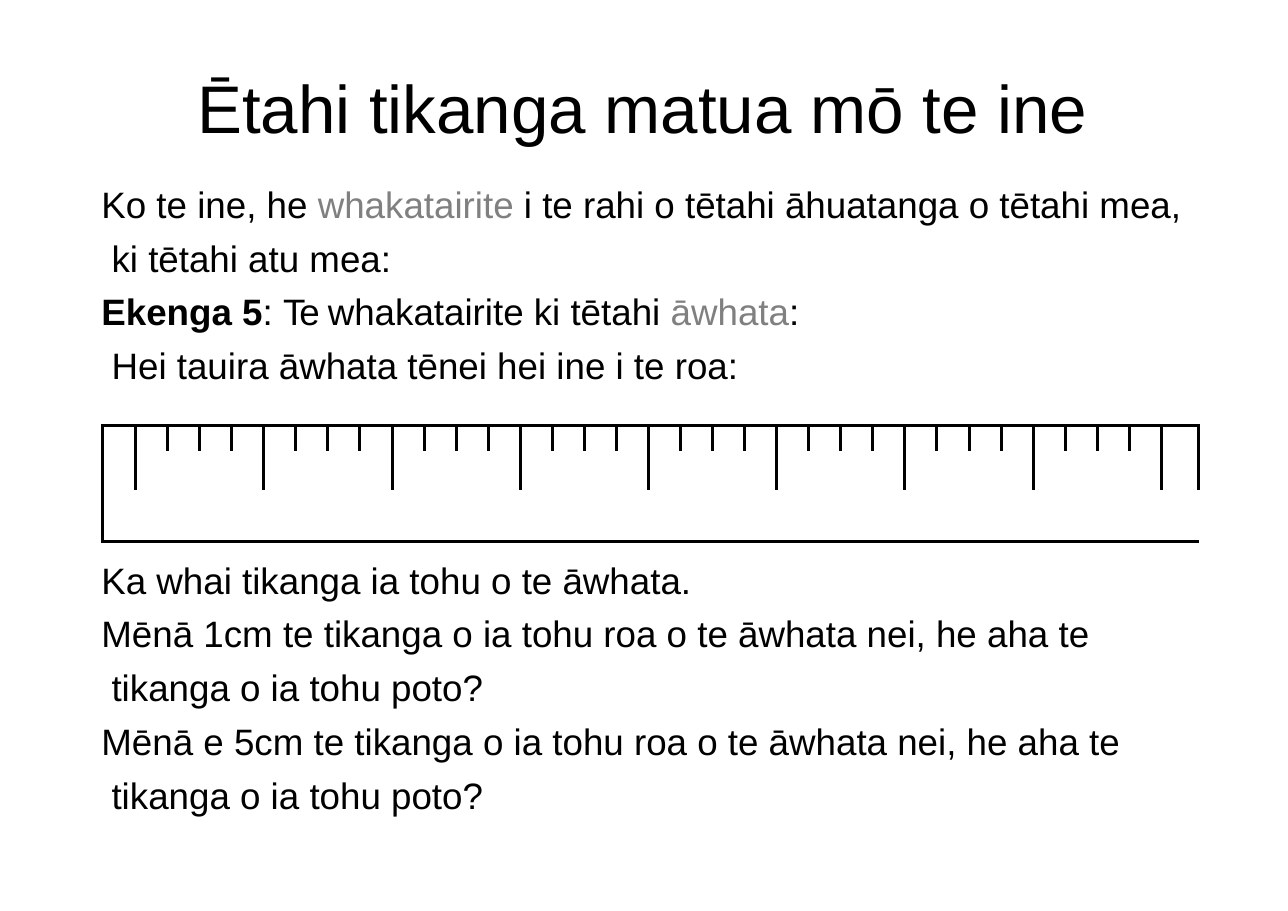
from lxml import etree
from pptx import Presentation, util as u
from pptx.dml.color import RGBColor
from pptx.enum import text
from pptx.oxml import ns

BLACK = RGBColor(0, 0, 0)
GREY = RGBColor(0x80, 0x80, 0x80)
FONT = "Arial"
WIDTH, HEIGHT = u.Inches(11.69), u.Inches(8.27)
NO_GRID_STYLE = "{2D5ABB26-0587-4C30-8999-92F81FD0307C}"

# Ruler: margin columns around 8 units of 4 steps
UNITS, STEPS = 8, 4
LAST = UNITS * STEPS + 1
ROWS = [0.23, 0.35, 0.47]
START, END = 0.3, 0.34

TITLE = "Ētahi tikanga matua mō te ine"
# Each paragraph is a list of (words, format) runs
INTRO = [
    [("Ko te ine, he ", {}), ("whakatairite ", {"color": GREY}),
     ("i te rahi o tētahi āhuatanga o tētahi mea,\n ki tētahi atu mea:", {})],
    [("Ekenga 5", {"bold": True}), (": ", {}), ("Te ", {"tracking": -1.4}),
     ("whakatairite ki tētahi ", {}), ("āwhata", {"color": GREY}),
     (":\n Hei tauira āwhata tēnei hei ine i te roa:", {})],
]
QUESTIONS = [
    [("Ka whai tikanga ia tohu o te āwhata.", {})],
    [("Mēnā 1cm te tikanga o ia tohu roa o te āwhata nei, he aha te\n"
      " tikanga o ia tohu poto?", {})],
    [("Mēnā e 5cm te tikanga o ia tohu roa o te āwhata nei, he aha te\n"
      " tikanga o ia tohu poto?", {})],
]


def area(left, top, width, height):
    """Turn percentages of the slide into a position and size."""
    return (int(WIDTH * left / 100), int(HEIGHT * top / 100),
            int(WIDTH * width / 100), int(HEIGHT * height / 100))


def prepare_frame(frame, top_inset):
    frame.word_wrap = True
    frame.auto_size = text.MSO_AUTO_SIZE.NONE
    frame.vertical_anchor = text.MSO_ANCHOR.TOP
    frame.margin_left = frame.margin_right = frame.margin_bottom = 0
    frame.margin_top = u.Inches(top_inset)


def add_run(paragraph, words, size, color=BLACK, bold=False, tracking=0):
    for number, line in enumerate(words.split("\n")):
        if number:
            paragraph.add_line_break()
        run = paragraph.add_run()
        run.text = line
        run.font.name, run.font.size = FONT, u.Pt(size)
        run.font.bold, run.font.color.rgb = bold, color
        if tracking:
            run.font._element.set("spc", str(round(tracking * 100)))


def add_title(slide):
    title = slide.shapes.title
    title.left, title.top, title.width, title.height = area(15.31, 7.13, 71, 9.19)
    prepare_frame(title.text_frame, 0.01)
    paragraph = title.text_frame.paragraphs[0]
    paragraph.alignment = text.PP_ALIGN.LEFT
    paragraph.space_before = u.Pt(1)
    add_run(paragraph, TITLE, 44)


def add_text(slide, place, paragraphs, top_inset, first_gap, first_spacing):
    frame = slide.shapes.add_textbox(*place).text_frame
    prepare_frame(frame, top_inset)
    for number, runs in enumerate(paragraphs):
        paragraph = frame.add_paragraph() if number else frame.paragraphs[0]
        paragraph.line_spacing = 1.22 if number else first_spacing
        paragraph.space_before = u.Pt(0 if number else first_gap)
        for words, style in runs:
            add_run(paragraph, words, 24, **style)


def format_cell(cell, sides):
    """Clear the cell and draw black borders on the given sides (L, R, T, B)."""
    cell.margin_left = cell.margin_right = cell.margin_top = cell.margin_bottom = 0
    paragraph = cell.text_frame.paragraphs[0]._p
    etree.SubElement(paragraph, ns.qn("a:endParaRPr"), sz="600")
    properties = cell._tc.get_or_add_tcPr()
    for side in "LRTB":
        if side in sides:
            line = etree.SubElement(properties, ns.qn(f"a:ln{side}"),
                                    w=str(u.Pt(2.25)))
            fill = etree.SubElement(line, ns.qn("a:solidFill"))
            etree.SubElement(fill, ns.qn("a:srgbClr"), val=str(BLACK))
    cell.fill.background()


def cell_sides(row, column):
    """Short ticks in the top row, long ticks also in the middle row."""
    sides = {0: "T", 1: "", 2: "B"}[row]
    if column == 0 or (row == 0 and column < LAST):
        sides += "L"
    elif row == 1 and column < LAST and column % STEPS == 1:
        sides += "L"
    if column == LAST or (row == 0 and column < LAST):
        sides += "R"
    elif row == 1 and column < LAST and column % STEPS == 0:
        sides += "R"
    return sides


def add_ruler(slide):
    place = area(7.96, 46.75, 85.12, 12.7)
    table = slide.shapes.add_table(len(ROWS), LAST + 1, *place).table
    table.first_row = table.horz_banding = False
    table._tbl.tblPr.find(ns.qn("a:tableStyleId")).text = NO_GRID_STYLE
    step = (place[2] - u.Inches(START + END)) // (LAST - 1)
    for number, column in enumerate(table.columns):
        column.width = {0: u.Inches(START), LAST: u.Inches(END)}.get(number, step)
    for row, height in enumerate(ROWS):
        table.rows[row].height = u.Inches(height)
        for column in range(LAST + 1):
            format_cell(table.cell(row, column), cell_sides(row, column))
    # Join margins, units and the blank lower strip
    for column in (0, LAST):
        table.cell(0, column).merge(table.cell(1, column))
    for column in range(1, LAST, STEPS):
        table.cell(1, column).merge(table.cell(1, column + STEPS - 1))
    table.cell(2, 0).merge(table.cell(2, LAST))


def main():
    presentation = Presentation()
    presentation.slide_width, presentation.slide_height = WIDTH, HEIGHT
    slide = presentation.slides.add_slide(presentation.slide_layouts[5])
    add_title(slide)
    add_text(slide, area(7.87, 59.98, 84.69, 29.75), QUESTIONS, 0.1, 7.2, 1)
    add_ruler(slide)
    add_text(slide, area(7.87, 18.86, 84.69, 23.82), INTRO, 0.01, 1, 1.21)
    presentation.save("out.pptx")


if __name__ == "__main__":
    main()
